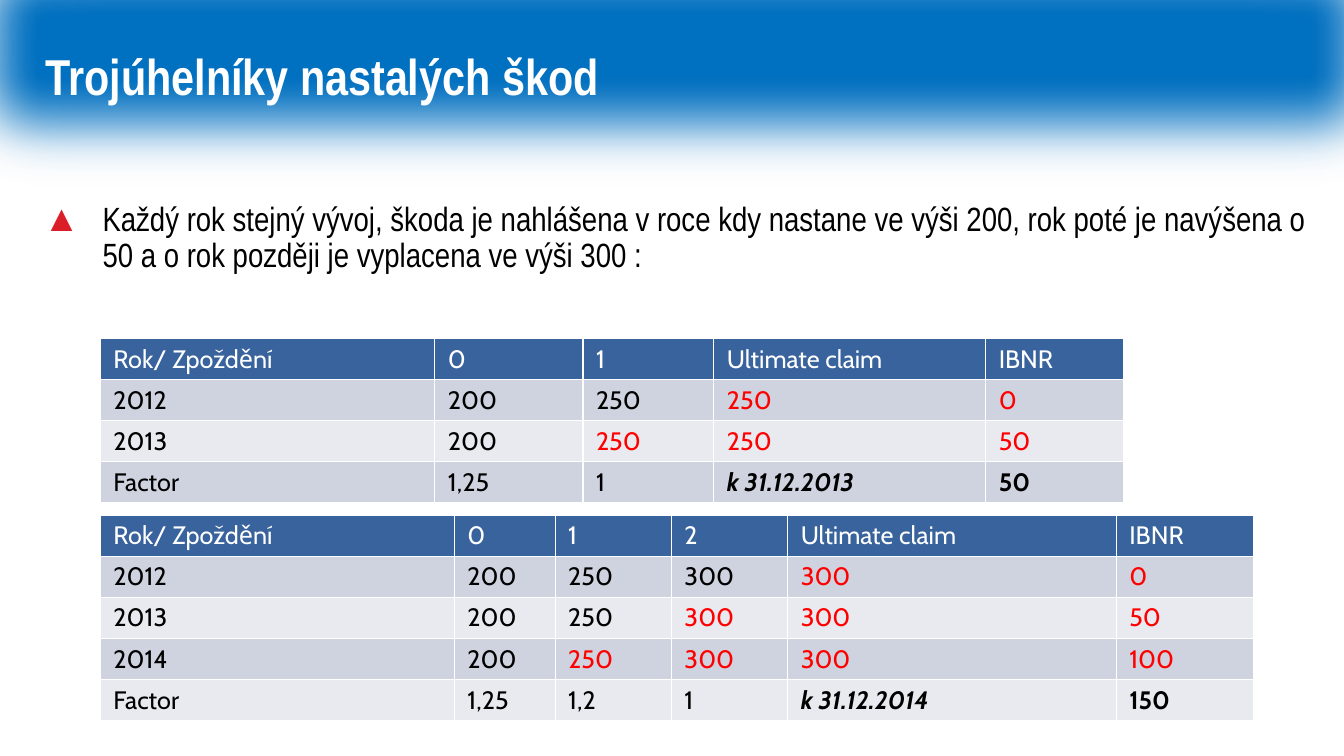
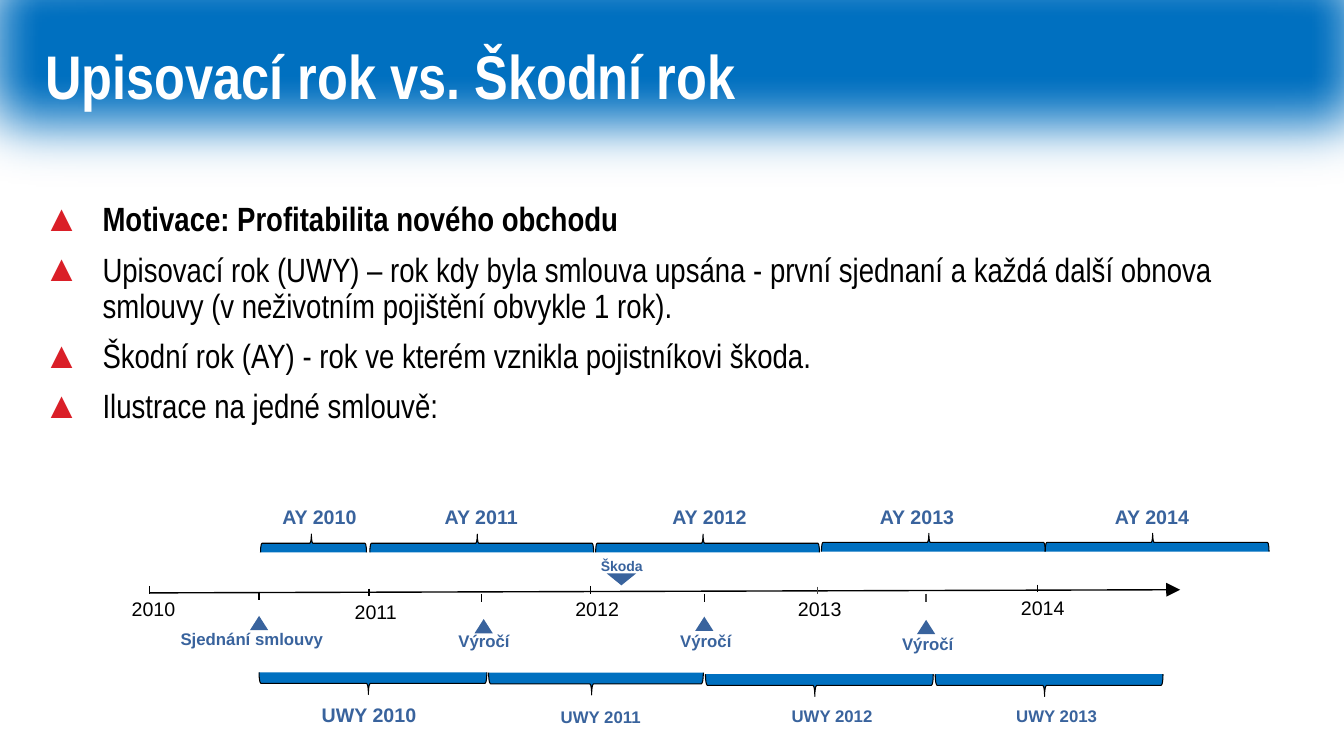
from dataclasses import dataclass

from lxml import etree
from pptx import Presentation
from pptx.dml.color import RGBColor
from pptx.enum.shapes import MSO_CONNECTOR, MSO_SHAPE
from pptx.enum.text import MSO_ANCHOR, MSO_AUTO_SIZE, PP_ALIGN
from pptx.oxml.ns import qn
from pptx.util import Cm, Pt

RECT, BRACE, TRIANGLE = MSO_SHAPE.RECTANGLE, MSO_SHAPE.LEFT_BRACE, MSO_SHAPE.ISOSCELES_TRIANGLE
STRAIGHT = MSO_CONNECTOR.STRAIGHT
MIDDLE, LEFT, CENTER = MSO_ANCHOR.MIDDLE, PP_ALIGN.LEFT, PP_ALIGN.CENTER
NO_FIT = MSO_AUTO_SIZE.NONE


@dataclass(frozen=True)
class Theme:
    band: str = "0070C0"
    accent: str = "39639D"
    bullet: str = "DA1F28"
    red: str = "FF0000"
    black: str = "000000"
    grey: str = "464646"
    white: str = "FFFFFF"
    rows: tuple = ("CED3DF", "E8EAEF")
    heading: str = "Arial Narrow"
    table: str = "Cabin"
    label: str = "Arial"
    body_size: int = 24
    table_size: int = 18
    large: int = 14
    medium: int = 12
    small: int = 10


T = Theme()
TITLE_BOX = (0.89, 0.43, 28.02, 3.15)
BODY_BOX = (0.84, 4.98, 32.59, 12.55)
BAND_BOX = (-2.34, -2.92, 38.71, 8.18)
ROW_HEIGHT = 1.03


def rgb(value):
    return RGBColor.from_string(value)


def cms(*values):
    return [Cm(v) for v in values]


def sub(parent, tag, **attrs):
    return etree.SubElement(parent, qn(tag), attrs)


def add_run(p, text, font, size, color, bold=False, italic=False):
    r = p.add_run()
    r.text = text
    f = r.font
    f.name, f.size, f.bold, f.italic = font, Pt(size), bold, italic
    f.color.rgb = rgb(color)


def add_filled(shapes, kind, box, color, outline=None):
    sp = shapes.add_shape(kind, *cms(*box))
    sp.shadow.inherit = False
    sp.fill.solid()
    sp.fill.fore_color.rgb = rgb(color)
    if outline:
        sp.line.color.rgb = rgb(outline)
        sp.line.width = Pt(0.75)
    else:
        sp.line.fill.background()
    return sp


def add_line(shapes, start, end, color, arrow=False):
    line = shapes.add_connector(STRAIGHT, *cms(*start, *end))
    line.line.color.rgb = rgb(color)
    line.line.width = Pt(1)
    if arrow:
        ln = line.element.spPr.find(qn("a:ln"))
        sub(ln, "a:tailEnd", type="triangle", w="lg", len="lg")
    sub(line.element.spPr, "a:effectLst")


def add_label(shapes, cx, top, width, text, size, color=T.accent, bold=True, inset=0.2):
    box = shapes.add_textbox(*cms(cx - width / 2, top, width, inset + size * 0.035))
    tf = box.text_frame
    tf.word_wrap = False
    tf.margin_left = tf.margin_right = tf.margin_bottom = 0
    tf.margin_top = Cm(inset)
    p = tf.paragraphs[0]
    p.alignment, p.line_spacing = CENTER, 0.8
    add_run(p, text, T.label, size, color, bold)


def add_brace(shapes, cx, cy, length, thickness, points_up):
    box = (cx - thickness / 2, cy - length / 2, thickness, length)
    sp = add_filled(shapes, BRACE, box, T.band, T.black)
    sp.rotation = 90 if points_up else 270
    sp.adjustments[0] = 0.08
    sp.adjustments[1] = 0.52 if points_up else 0.48


def place(shape, box):
    shape.left, shape.top, shape.width, shape.height = cms(*box)


def add_band(s, master):
    sp = add_filled(s.shapes, RECT, BAND_BOX, T.band)
    sub(sp.element.spPr.find(qn("a:effectLst")), "a:softEdge", rad="635000")
    sp.element.nvSpPr.cNvPr.set("id", "99")
    master.shapes.element.insert(2, sp.element)


def add_title(s, text, size):
    sp = s.shapes.title
    place(sp, TITLE_BOX)
    tf = sp.text_frame
    tf.auto_size, tf.vertical_anchor = NO_FIT, MIDDLE
    p = tf.paragraphs[0]
    p.alignment, p.line_spacing = LEFT, 0.9
    add_run(p, text, T.heading, size, T.white, True)


def add_bullets(s, items):
    sp = s.placeholders[1]
    place(sp, BODY_BOX)
    tf = sp.text_frame
    tf.auto_size = NO_FIT
    for i, (text, bold) in enumerate(items):
        p = tf.add_paragraph() if i else tf.paragraphs[0]
        pr = p._p.get_or_add_pPr()
        pr.set("marL", str(Cm(1.49)))
        pr.set("indent", str(-Cm(1.49)))
        sub(sub(pr, "a:buClr"), "a:srgbClr", val=T.bullet)
        sub(pr, "a:buSzPct", val="110000")
        sub(pr, "a:buFont", typeface=T.label)
        sub(pr, "a:buChar", char="▲")
        p.line_spacing = 0.9
        p.space_before = Pt(10 if i else 0)
        add_run(p, text, T.heading, T.body_size, T.black, bold)


def format_cell(cell, text, fill, color, bold, italic):
    tc_pr = cell._tc.get_or_add_tcPr()
    for side in "LRTB":
        ln = sub(tc_pr, f"a:ln{side}", w=str(Pt(1)))
        sub(sub(ln, "a:solidFill"), "a:srgbClr", val=T.white)
    cell.fill.solid()
    cell.fill.fore_color.rgb = rgb(fill)
    cell.vertical_anchor = MIDDLE
    cell.margin_left = cell.margin_right = Cm(0.33)
    cell.margin_top = cell.margin_bottom = Cm(0.13)
    add_run(cell.text_frame.paragraphs[0], text, T.table, T.table_size, color, bold, italic)


def add_triangle_table(s, left, top, widths, rows):
    last, cols = len(rows) - 1, len(widths)
    years = last - 1
    box = cms(left, top, sum(widths), ROW_HEIGHT * len(rows))
    table = s.shapes.add_table(len(rows), cols, *box).table
    for column, width in zip(table.columns, widths):
        column.width = Cm(width)
    for i, row in enumerate(rows):
        table.rows[i].height = Cm(ROW_HEIGHT)
        for j, text in enumerate(row):
            estimated = 0 < i < last and i - 1 + j > years
            color = T.white if i == 0 else T.red if estimated else T.black
            total = i == last and j >= cols - 2
            format_cell(table.cell(i, j), text, T.rows[(i - 1) % 2] if i else T.accent,
                        color, total, total and j == cols - 2)


def add_accident_years(s, x, y):
    shapes = s.shapes.add_group_shape().shapes
    periods = ((2010, 4.14, 1.04, 2.67, 4.29), (2011, 8.38, 1.04, 5.64, 8.37),
               (2012, 14.07, 1.04, 5.64, 14.12), (2013, 19.76, 1.02, 5.64, 19.35),
               (2014, 25.4, 1.02, 5.64, 25.27))
    for year, cx, cy, length, label_x in periods:
        add_brace(shapes, x + cx, y + cy, length, 0.46, True)
        add_label(shapes, x + label_x, y, 2.2, f"AY {year}", T.large)


def add_underwriting_years(s, x, y):
    shapes = s.shapes.add_group_shape().shapes
    periods = ((2010, 5.64, 4.57, 5.74, 5.54, 4.98, T.large),
               (2011, 11.26, 4.58, 5.41, 11.38, 5.05, T.medium),
               (2012, 16.89, 4.62, 5.74, 17.21, 5.03, T.medium),
               (2013, 22.68, 4.62, 5.74, 22.87, 5.03, T.medium))
    for year, cx, cy, length, label_x, label_y, size in periods:
        add_brace(shapes, x + cx, y + cy, length, 0.56, False)
        add_label(shapes, x + label_x, y + label_y, size * 0.2, f"UWY {year}", size)


def add_time_axis(s, x, y):
    shapes = s.shapes.add_group_shape().shapes
    add_line(shapes, (x, y + 2.29), (x + 25.98, y + 2.21), T.black, True)

    def add_tick(cx, top, color):
        add_line(shapes, (x + cx, y + top), (x + cx, y + top + 0.2), color)

    years = ((2010, 0, 2.11, 0.11, 2.41, T.black), (2011, 5.54, 2.18, 5.71, 2.49, T.black),
             (2012, 11.12, 2.11, 11.29, 2.41, T.black), (2013, 16.84, 2.13, 16.9, 2.41, T.grey),
             (2014, 22.38, 2.08, 22.52, 2.39, T.black))
    for year, cx, top, label_x, label_y, color in years:
        add_tick(cx, top, color)
        add_label(shapes, x + label_x, y + label_y, 1.4, str(year), T.large,
                  T.black, False, 0.1)

    events = (("Sjednání smlouvy", 2.77, 2.26, 2.77, 2.87, 2.59, 3.1, 4.42, T.black),
              ("Výročí", 8.38, 2.31, 8.43, 2.95, 8.44, 3.15, 1.6, T.black),
              ("Výročí", 13.99, 2.31, 13.99, 2.89, 14.03, 3.15, 1.6, T.black),
              ("Výročí", 19.58, 2.31, 19.58, 2.97, 19.62, 3.23, 1.6, T.grey))
    for text, cx, top, mark_x, mark_y, label_x, label_y, width, color in events:
        add_tick(cx, top, color)
        add_filled(shapes, TRIANGLE, (x + mark_x - 0.23, y + mark_y, 0.46, 0.36), T.accent)
        add_label(shapes, x + label_x, y + label_y, width, text, T.medium)

    claim = add_filled(shapes, TRIANGLE, (x + 11.53, y + 1.8, 0.74, 0.3), T.accent)
    claim.rotation = 180
    add_label(shapes, x + 11.91, y + 1.27, 1.3, "Škoda", T.small)


def add_timeline(s, x, y):
    for add_part in (add_underwriting_years, add_time_axis, add_accident_years):
        add_part(s, x, y)


def build_triangles(s):
    add_title(s, "Trojúhelníky nastalých škod", 36)
    add_bullets(s, [("Každý rok stejný vývoj, škoda je nahlášena v roce kdy nastane ve výši 200, "
                     "rok poté je navýšena o 50 a o rok později je vyplacena ve výši 300 :", False)])
    add_triangle_table(s, 2.53, 8.53, (8.43, 3.73, 3.3, 6.85, 3.47), (
        ("Rok/ Zpoždění", "0", "1", "Ultimate claim", "IBNR"),
        ("2012", "200", "250", "250", "0"),
        ("2013", "200", "250", "250", "50"),
        ("Factor", "1,25", "1", "k 31.12.2013", "50")))
    add_triangle_table(s, 2.53, 12.98, (8.92, 2.54, 2.93, 2.93, 8.28, 3.46), (
        ("Rok/ Zpoždění", "0", "1", "2", "Ultimate claim", "IBNR"),
        ("2012", "200", "250", "300", "300", "0"),
        ("2013", "200", "250", "300", "300", "50"),
        ("2014", "200", "250", "300", "300", "100"),
        ("Factor", "1,25", "1,2", "1", "k 31.12.2014", "150")))


def build_years(s):
    add_title(s, "Upisovací rok vs. Škodní rok", 44)
    add_bullets(s, [
        ("Motivace: Profitabilita nového obchodu", True),
        ("Upisovací rok (UWY) – rok kdy byla smlouva upsána - první sjednaní a každá další "
         "obnova smlouvy (v neživotním pojištění obvykle 1 rok).", False),
        ("Škodní rok (AY) - rok ve kterém vznikla pojistníkovi škoda.", False),
        ("Ilustrace na jedné smlouvě:", False)])
    add_timeline(s, 3.76, 12.65)


def main():
    prs = Presentation()
    prs.slide_width, prs.slide_height = cms(33.87, 19.05)
    layout = prs.slide_layouts[1]
    slides = [prs.slides.add_slide(layout) for _ in range(2)]
    add_band(slides[0], prs.slide_master)
    for build, s in zip((build_triangles, build_years), slides):
        build(s)
    prs.save("out.pptx")


if __name__ == "__main__":
    main()
